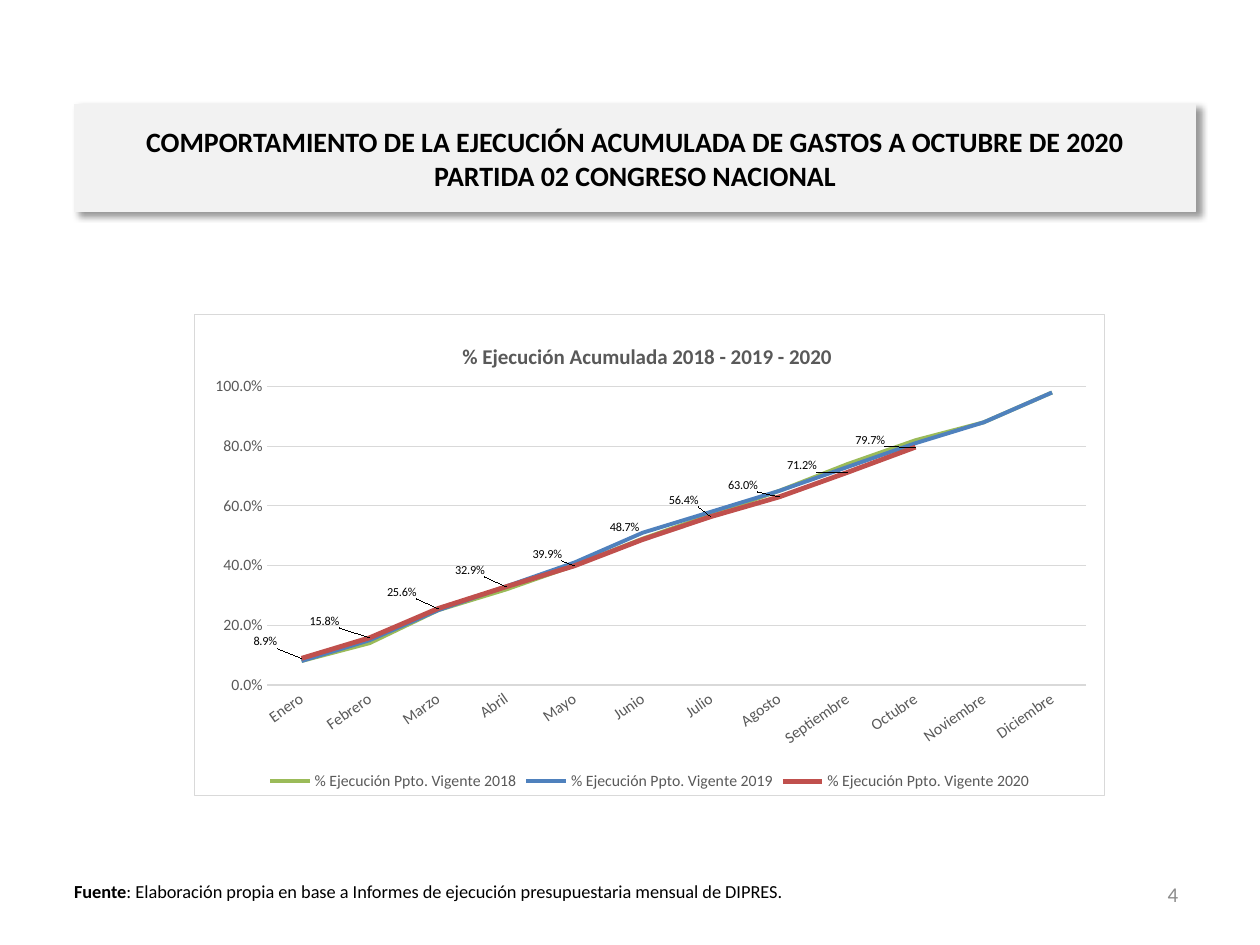
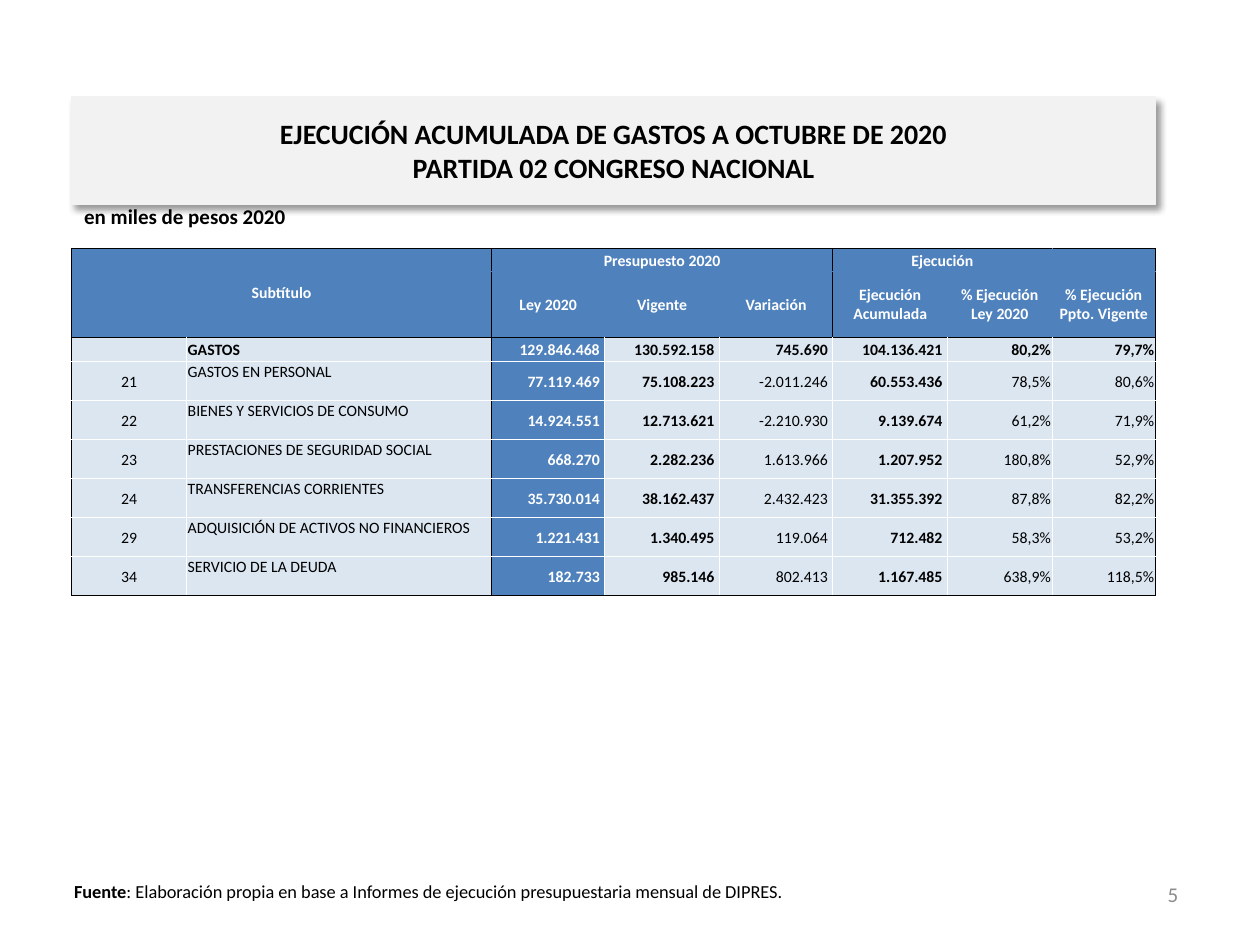
"""Build two slides on the accumulated spending of Partida 02 to October 2020."""
from lxml.etree import SubElement
from pptx import Presentation
from pptx.chart.data import CategoryChartData
from pptx.dml.color import RGBColor
from pptx.enum.chart import (XL_CHART_TYPE, XL_LABEL_POSITION, XL_LEGEND_POSITION,
                             XL_TICK_MARK)
from pptx.enum.text import MSO_ANCHOR as ANCHOR, MSO_AUTO_SIZE, PP_ALIGN as ALIGN
from pptx.oxml import parse_xml
from pptx.oxml.ns import nsdecls, qn
from pptx.util import Inches, Pt

FONT = "Calibri"
BLACK = RGBColor(0x00, 0x00, 0x00)
WHITE = RGBColor(0xFF, 0xFF, 0xFF)
BAND_GRAY = RGBColor(0xF2, 0xF2, 0xF2)
GRID_GRAY = RGBColor(0xD9, 0xD9, 0xD9)
AXIS_GRAY = RGBColor(0x59, 0x59, 0x59)
NUMBER_GRAY = RGBColor(0x8C, 0x8C, 0x8C)
BLUE = RGBColor(0x4F, 0x81, 0xBD)
PALE_BLUE = RGBColor(0xDC, 0xE6, 0xF1)
GREEN = RGBColor(0x9B, 0xBB, 0x59)
RED = RGBColor(0xC0, 0x50, 0x4D)


def write(paragraph, text, size=9, bold=False, color=BLACK, align=ALIGN.LEFT):
    paragraph.alignment = align
    for index, line in enumerate(text.split("\v")):
        if index:
            paragraph.add_line_break()
        run = paragraph.add_run()
        run.text = line
        run.font.name = FONT
        run.font.size = Pt(size)
        run.font.bold = bold
        run.font.color.rgb = color


def chart_layout(*fractions, inner=False):
    target = '<c:layoutTarget val="inner"/>' if inner else ""
    modes = '<c:xMode val="edge"/><c:yMode val="edge"/>' if fractions[0] > 0 else ""
    values = "".join(f'<c:{name} val="{value}"/>' for name, value in zip("xywh", fractions))
    return parse_xml(f'<c:layout {nsdecls("c")}><c:manualLayout>{target}{modes}{values}'
                     '</c:manualLayout></c:layout>')


presentation = Presentation()
presentation.slide_width = Inches(10)
presentation.slide_height = Inches(7.5)

title_bands = [
    ("COMPORTAMIENTO DE LA EJECUCIÓN ACUMULADA DE GASTOS A OCTUBRE DE 2020", 0.59, 0.83, 8.9),
    ("EJECUCIÓN ACUMULADA DE GASTOS A OCTUBRE DE 2020", 0.57, 0.77, 8.6),
]
slides = []
for page, (heading, left, top, width) in enumerate(title_bands, start=4):
    slide = presentation.slides.add_slide(presentation.slide_layouts[5])
    slides.append(slide)
    title = slide.shapes.title
    title.left, title.top = Inches(left), Inches(top)
    title.width, title.height = Inches(width), Inches(0.85)
    title.fill.solid()
    title.fill.fore_color.rgb = BAND_GRAY
    title.line.color.rgb = BAND_GRAY
    title.line.width = Pt(0.75)
    title.shadow.inherit = False
    effects = title.element.spPr.find(qn("a:effectLst"))
    shadow = SubElement(effects, qn("a:outerShdw"), blurRad=str(Pt(4)), dist=str(Pt(3)),
                        dir="2700000", algn="tl", rotWithShape="0")
    shadow_color = SubElement(shadow, qn("a:srgbClr"), val=str(BLACK))
    SubElement(shadow_color, qn("a:alpha"), val="40000")
    title.text_frame.auto_size = MSO_AUTO_SIZE.NONE
    title.text_frame.word_wrap = True
    title.text_frame.vertical_anchor = ANCHOR.MIDDLE
    write(title.text_frame.paragraphs[0], heading + "\vPARTIDA 02 CONGRESO NACIONAL",
          size=16, bold=True, align=ALIGN.CENTER)

    page_number = slide.shapes.add_textbox(Inches(7.12), Inches(6.9), Inches(2.33), Inches(0.4))
    page_number.text_frame.word_wrap = True
    page_number.text_frame.vertical_anchor = ANCHOR.MIDDLE
    write(page_number.text_frame.paragraphs[0], str(page), size=12, color=NUMBER_GRAY,
          align=ALIGN.RIGHT)

    source = slide.shapes.add_textbox(Inches(0.49), Inches(6.94), Inches(9), Inches(0.4))
    source.text_frame.word_wrap = True
    source_paragraph = source.text_frame.paragraphs[0]
    write(source_paragraph, "Fuente", size=10.5, bold=True)
    write(source_paragraph, ": Elaboración propia en base a Informes de ejecución "
          "presupuestaria mensual de DIPRES.", size=10.5)

chart_slide, table_slide = slides

execution_series = [
    (2018, GREEN, 2.25,
     [0.08, 0.14, 0.25, 0.32, 0.4, 0.49, 0.57, 0.65, 0.74, 0.82, 0.88, 0.98]),
    (2019, BLUE, 2.25,
     [0.08, 0.15, 0.25, 0.33, 0.41, 0.51, 0.58, 0.65, 0.73, 0.81, 0.88, 0.98]),
    (2020, RED, 2.75,
     [0.089, 0.158, 0.256, 0.329, 0.399, 0.487, 0.564, 0.63, 0.712, 0.797, None, None]),
]
chart_data = CategoryChartData(number_format="0.0%")
chart_data.categories = ["Enero", "Febrero", "Marzo", "Abril", "Mayo", "Junio", "Julio",
                         "Agosto", "Septiembre", "Octubre", "Noviembre", "Diciembre"]
for year, color, width, values in execution_series:
    chart_data.add_series(f"% Ejecución Ppto. Vigente {year}", values)
chart = chart_slide.shapes.add_chart(XL_CHART_TYPE.LINE, Inches(1.54), Inches(2.49),
                                     Inches(7.23), Inches(3.83), chart_data).chart
chart.font.name = FONT
chart.font.size = Pt(10)
chart.font.color.rgb = BLACK
chart_space = chart.element
chart_space.find(qn("c:txPr")).addprevious(parse_xml(
    f'<c:spPr {nsdecls("c", "a")}><a:solidFill><a:srgbClr val="{WHITE}"/></a:solidFill>'
    f'<a:ln w="{Pt(0.75)}"><a:solidFill><a:srgbClr val="{GRID_GRAY}"/></a:solidFill></a:ln>'
    '</c:spPr>'))

chart.has_title = True
write(chart.chart_title.text_frame.paragraphs[0], "% Ejecución Acumulada 2018 - 2019 - 2020",
      size=12, bold=True, color=AXIS_GRAY, align=ALIGN.CENTER)
chart_title = chart_space.chart.find(qn("c:title"))
for old_layout in chart_title.findall(qn("c:layout")):
    chart_title.remove(old_layout)
chart_title.find(qn("c:tx")).addnext(chart_layout(0.29, 0.05))
plot_area = chart_space.chart.plotArea
for old_layout in plot_area.findall(qn("c:layout")):
    plot_area.remove(old_layout)
plot_area.insert(0, chart_layout(0.08, 0.15, 0.9, 0.62, inner=True))

chart.has_legend = True
chart.legend.position = XL_LEGEND_POSITION.BOTTOM
chart.legend.include_in_layout = False
category_axis, value_axis = chart.category_axis, chart.value_axis
for font in (chart.legend.font, category_axis.tick_labels.font, value_axis.tick_labels.font):
    font.name = FONT
    font.size = Pt(9)
    font.color.rgb = AXIS_GRAY
for axis in (category_axis, value_axis):
    axis.major_tick_mark = axis.minor_tick_mark = XL_TICK_MARK.NONE
category_axis.format.line.color.rgb = GRID_GRAY
category_axis.format.line.width = Pt(1)
category_axis._element.find(qn("c:txPr")).find(qn("a:bodyPr")).set("rot", "-2100000")
value_axis.format.line.fill.background()
value_axis.minimum_scale, value_axis.maximum_scale = 0, 1
value_axis.major_unit = 0.2
value_axis.tick_labels.number_format = "0.0%"
value_axis.tick_labels.number_format_is_linked = False
value_axis.major_gridlines.format.line.color.rgb = GRID_GRAY
value_axis.major_gridlines.format.line.width = Pt(0.75)

for series, (year, color, width, values) in zip(chart.plots[0].series, execution_series):
    series.smooth = False
    series.format.line.color.rgb = color
    series.format.line.width = Pt(width)

label_shifts = [(-0.04, -0.01), (-0.05, -0.01), (-0.04, -0.01), (-0.04, -0.01), (-0.03, 0),
                (-0.02, 0), (-0.03, -0.01), (-0.04, 0), (-0.05, 0.01), (-0.05, 0.01)]
current_year = chart.plots[0].series[2]
for index, shift in enumerate(label_shifts):
    label = current_year.points[index].data_label
    label.font.name = FONT
    label.font.size = Pt(7)
    label.font.color.rgb = BLACK
    label.position = XL_LABEL_POSITION.ABOVE
for label_element, shift in zip(current_year._element.iter(qn("c:dLbl")), label_shifts):
    label_element.find(qn("c:idx")).addnext(chart_layout(*shift))
labels = current_year.data_labels
labels.show_value = True
labels.number_format = "0.0%"
labels.number_format_is_linked = False
labels.font.name = FONT
labels.font.size = Pt(7)
labels.font.color.rgb = BLACK

units = table_slide.shapes.add_textbox(Inches(0.57), Inches(1.57), Inches(8.76), Inches(0.4))
units.text_frame.word_wrap = True
write(units.text_frame.paragraphs[0], "en miles de pesos 2020", size=12, bold=True)

budget_rows = [
    ["Subtítulo", "", "Presupuesto 2020", "", "", "Ejecución", "", ""],
    ["", "", "Ley 2020", "Vigente", "Variación", "Ejecución Acumulada",
     "% Ejecución Ley 2020", "% Ejecución Ppto. Vigente"],
    ["", "GASTOS", "129.846.468", "130.592.158", "745.690", "104.136.421", "80,2%", "79,7%"],
    ["21", "GASTOS EN PERSONAL", "77.119.469", "75.108.223", "-2.011.246", "60.553.436",
     "78,5%", "80,6%"],
    ["22", "BIENES Y SERVICIOS DE CONSUMO", "14.924.551", "12.713.621", "-2.210.930",
     "9.139.674", "61,2%", "71,9%"],
    ["23", "PRESTACIONES DE SEGURIDAD SOCIAL", "668.270", "2.282.236", "1.613.966",
     "1.207.952", "180,8%", "52,9%"],
    ["24", "TRANSFERENCIAS CORRIENTES", "35.730.014", "38.162.437", "2.432.423",
     "31.355.392", "87,8%", "82,2%"],
    ["29", "ADQUISICIÓN DE ACTIVOS NO FINANCIEROS", "1.221.431", "1.340.495", "119.064",
     "712.482", "58,3%", "53,2%"],
    ["34", "SERVICIO DE LA DEUDA", "182.733", "985.146", "802.413", "1.167.485",
     "638,9%", "118,5%"],
]
column_widths = [0.91, 2.42, 0.9, 0.91, 0.9, 0.91, 0.83, 0.82]
row_heights = [0.18, 0.53, 0.19] + [0.31] * 6
table = table_slide.shapes.add_table(len(row_heights), len(column_widths), Inches(0.57),
                                     Inches(1.97), Inches(8.6), Inches(2.76)).table
table.first_row = table.horz_banding = False
for column, width in zip(table.columns, column_widths):
    column.width = Inches(width)
for row, height in zip(table.rows, row_heights):
    row.height = Inches(height)
table.cell(0, 0).merge(table.cell(1, 1))
table.cell(0, 2).merge(table.cell(0, 4))
table.cell(0, 5).merge(table.cell(0, 6))

for row_index, texts in enumerate(budget_rows):
    header, total = row_index < 2, row_index == 2
    black_columns = {0, 2, 5, 8} if header else {0, 2, 8}
    black_rows = {0, 2, 9}
    for column_index, text in enumerate(texts):
        cell = table.cell(row_index, column_index)
        blue = header or column_index == 2
        borders = {
            "lnL": column_index in black_columns,
            "lnR": column_index + cell.span_width in black_columns,
            "lnT": row_index in black_rows,
            "lnB": row_index + cell.span_height in black_rows,
        }
        for side, is_black in borders.items():
            line = SubElement(cell._tc.get_or_add_tcPr(), qn(f"a:{side}"), w=str(Pt(0.5)))
            line_fill = SubElement(line, qn("a:solidFill"))
            line_color = BLACK if is_black else BLUE if header else WHITE
            SubElement(line_fill, qn("a:srgbClr"), val=str(line_color))
        cell.fill.solid()
        cell.fill.fore_color.rgb = BLUE if blue else PALE_BLUE
        amount = not header and 2 <= column_index <= 5
        cell.margin_left = cell.margin_top = Inches(0.01)
        cell.margin_right = Inches(0.04 if amount else 0.01)
        cell.margin_bottom = 0
        cell.vertical_anchor = ANCHOR.MIDDLE
        align = ALIGN.RIGHT
        if header or column_index == 0:
            align = ALIGN.CENTER
        elif column_index == 1:
            align = ALIGN.LEFT
            cell.vertical_anchor = ANCHOR.MIDDLE if total else ANCHOR.TOP
        if row_index == 0 and column_index > 0:
            cell.vertical_anchor = ANCHOR.BOTTOM
        paragraph = cell.text_frame.paragraphs[0]
        paragraph.font.size = Pt(9)
        if text:
            write(paragraph, text, bold=header or total or column_index in (2, 3, 5),
                  color=WHITE if blue else BLACK, align=align)

presentation.save("out.pptx")
